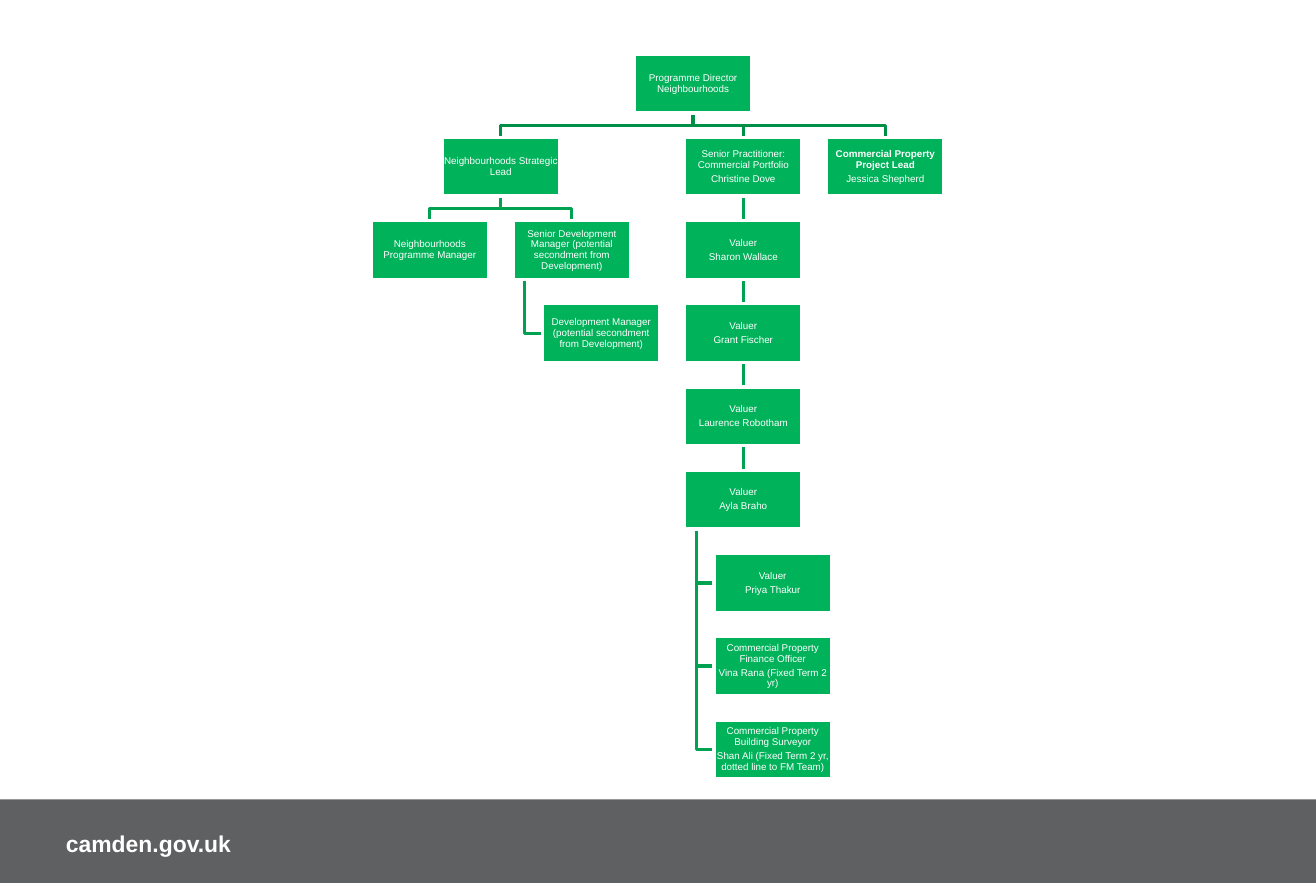
from dataclasses import dataclass, field

from lxml.etree import SubElement
from pptx import Presentation
from pptx.dml.color import RGBColor
from pptx.enum.shapes import MSO_CONNECTOR as Connector, MSO_SHAPE as Preset
from pptx.enum.text import MSO_ANCHOR as Anchor, PP_ALIGN as Align
from pptx.oxml.ns import qn
from pptx.util import Pt


@dataclass(frozen=True)
class Theme:
    font: str = "Arial"
    post_size: float = 6
    footer_size: float = 14
    line_width: float = 2
    text: RGBColor = RGBColor(0xFF, 0xFF, 0xFF)
    post: RGBColor = RGBColor(0x00, 0xB2, 0x59)
    top_link: RGBColor = RGBColor(0x00, 0x8F, 0x47)
    link: RGBColor = RGBColor(0x00, 0xA2, 0x51)
    footer: RGBColor = RGBColor(0x5F, 0x60, 0x62)


THEME = Theme()


@dataclass(frozen=True)
class Box:
    left: float
    top: float
    width: float
    height: float


@dataclass
class Post:
    """A post; without a column it is centred over its reports."""
    role: str
    holder: str = ""
    column: float = None
    reports: list = field(default_factory=list)
    hanging: bool = False
    bold: bool = False

    @property
    def left(self):
        if self.column is not None:
            return self.column
        return (self.reports[0].left + self.reports[-1].left) / 2


POST_WIDTH, POST_HEIGHT = 72, 36
GAP = 14.9
COLUMN_STEP, ROW_STEP = POST_WIDTH + GAP, POST_HEIGHT + GAP
INDENT = 18
STEM = 7.2
DEVELOPMENT = COLUMN_STEP
PORTFOLIO = DEVELOPMENT + INDENT + COLUMN_STEP
PROJECTS = PORTFOLIO + COLUMN_STEP

valuer_team = Post("Valuer", "Ayla Braho", PORTFOLIO, hanging=True, reports=[
    Post("Valuer", "Priya Thakur", PORTFOLIO + INDENT),
    Post("Commercial Property Finance Officer", "Vina Rana (Fixed Term 2 yr)",
         PORTFOLIO + INDENT),
    Post("Commercial Property Building Surveyor",
         "Shan Ali (Fixed Term 2 yr, dotted line to FM Team)",
         PORTFOLIO + INDENT),
])
for valuer in ("Laurence Robotham", "Grant Fischer", "Sharon Wallace"):
    valuer_team = Post("Valuer", valuer, reports=[valuer_team])

DIRECTOR = Post("Programme Director Neighbourhoods", reports=[
    Post("Neighbourhoods Strategic Lead", reports=[
        Post("Neighbourhoods Programme Manager", column=0),
        Post("Senior Development Manager (potential secondment from Development)",
             column=DEVELOPMENT, hanging=True, reports=[
                 Post("Development Manager (potential secondment from Development)",
                      column=DEVELOPMENT + INDENT)]),
    ]),
    Post("Senior Practitioner: Commercial Portfolio", "Christine Dove",
         reports=[valuer_team]),
    Post("Commercial Property Project Lead", "Jessica Shepherd", PROJECTS, bold=True),
])


def apply_format(target, values):
    for name, value in values.items():
        setattr(target, name, value)


def add_rectangle(slide, box, color):
    rectangle = slide.shapes.add_shape(
        Preset.RECTANGLE, Pt(box.left), Pt(box.top), Pt(box.width), Pt(box.height))
    rectangle.shadow.inherit = False
    rectangle.fill.solid()
    rectangle.fill.fore_color.rgb = color
    rectangle.line.fill.background()
    return rectangle


def write_lines(shape, lines, size, paragraph_format):
    """Write (text, bold) pairs as paragraphs, without insets."""
    frame = shape.text_frame
    apply_format(frame, dict(word_wrap=True, vertical_anchor=Anchor.MIDDLE,
                             margin_left=0, margin_top=0,
                             margin_right=0, margin_bottom=0))
    for index, (text, bold) in enumerate(lines):
        paragraph = frame.add_paragraph() if index else frame.paragraphs[0]
        paragraph.text = text
        apply_format(paragraph, paragraph_format)
        apply_format(paragraph.font, dict(name=THEME.font, size=Pt(size), bold=bold))
        paragraph.font.color.rgb = THEME.text


def draw_post(slide, post, box):
    rectangle = add_rectangle(slide, box, THEME.post)
    rectangle.line.color.rgb = THEME.text
    rectangle.line.width = Pt(THEME.line_width)
    lines = [(post.role, post.bold)]
    if post.holder:
        lines.append((post.holder, False))
    write_lines(rectangle, lines, THEME.post_size,
                dict(alignment=Align.CENTER, line_spacing=0.9, space_after=Pt(2.1)))
    return rectangle


def style_link(link, color):
    """Colour the link and send it behind the posts."""
    link.line.color.rgb = color
    link.line.width = Pt(THEME.line_width)
    element = link._element
    element.getparent().insert(2, element)


def draw_straight_link(slide, manager, report, color):
    link = slide.shapes.add_connector(Connector.STRAIGHT, 0, 0, 0, 0)
    link.begin_connect(manager, 2)
    link.end_connect(report, 0)
    SubElement(link._element.spPr, qn("a:effectLst"))
    style_link(link, color)


def draw_bent_link(slide, manager, report, hanging, color):
    bottom = manager.top + manager.height
    if hanging:
        stem = manager.left + Pt(STEM)
        middle = report.top + report.height // 2
        points = [(stem, bottom), (stem, middle), (report.left, middle)]
    else:
        start = manager.left + manager.width // 2
        end = report.left + report.width // 2
        bend = (bottom + report.top) // 2
        points = [(start, bottom), (start, bend), (end, bend), (end, report.top)]
    outline = slide.shapes.build_freeform(*points[0])
    outline.add_line_segments(points[1:], close=False)
    link = outline.convert_to_shape()
    link.shadow.inherit = False
    link.fill.background()
    style_link(link, color)


def draw_branch(slide, post, box, row=0):
    """Draw a post and all posts below it; the chart fills box."""
    manager = draw_post(slide, post, Box(box.left + post.left, box.top + row * ROW_STEP,
                                         POST_WIDTH, POST_HEIGHT))
    color = THEME.link if row else THEME.top_link
    for index, below in enumerate(post.reports):
        report_row = row + 1 + (index if post.hanging else 0)
        report = draw_branch(slide, below, box, report_row)
        if len(post.reports) == 1 and not post.hanging:
            draw_straight_link(slide, manager, report, color)
        else:
            draw_bent_link(slide, manager, report, post.hanging, color)
    return manager


def draw_footer(slide, box):
    add_rectangle(slide, box, THEME.footer)
    address = slide.shapes.add_textbox(
        Pt(box.left + 40.3), Pt(box.top + 18), Pt(332), Pt(17.3))
    write_lines(address, [("camden.gov.uk", True)], THEME.footer_size,
                dict(alignment=Align.LEFT))


def main():
    deck = Presentation()
    deck.slide_width, deck.slide_height = Pt(805), Pt(540)
    slide = deck.slides.add_slide(deck.slide_layouts[6])
    draw_branch(slide, DIRECTOR, Box(226.9, 33.1, 351, 444))
    draw_footer(slide, Box(0, 488.9, 805, 51.1))
    deck.save("out.pptx")


if __name__ == "__main__":
    main()
